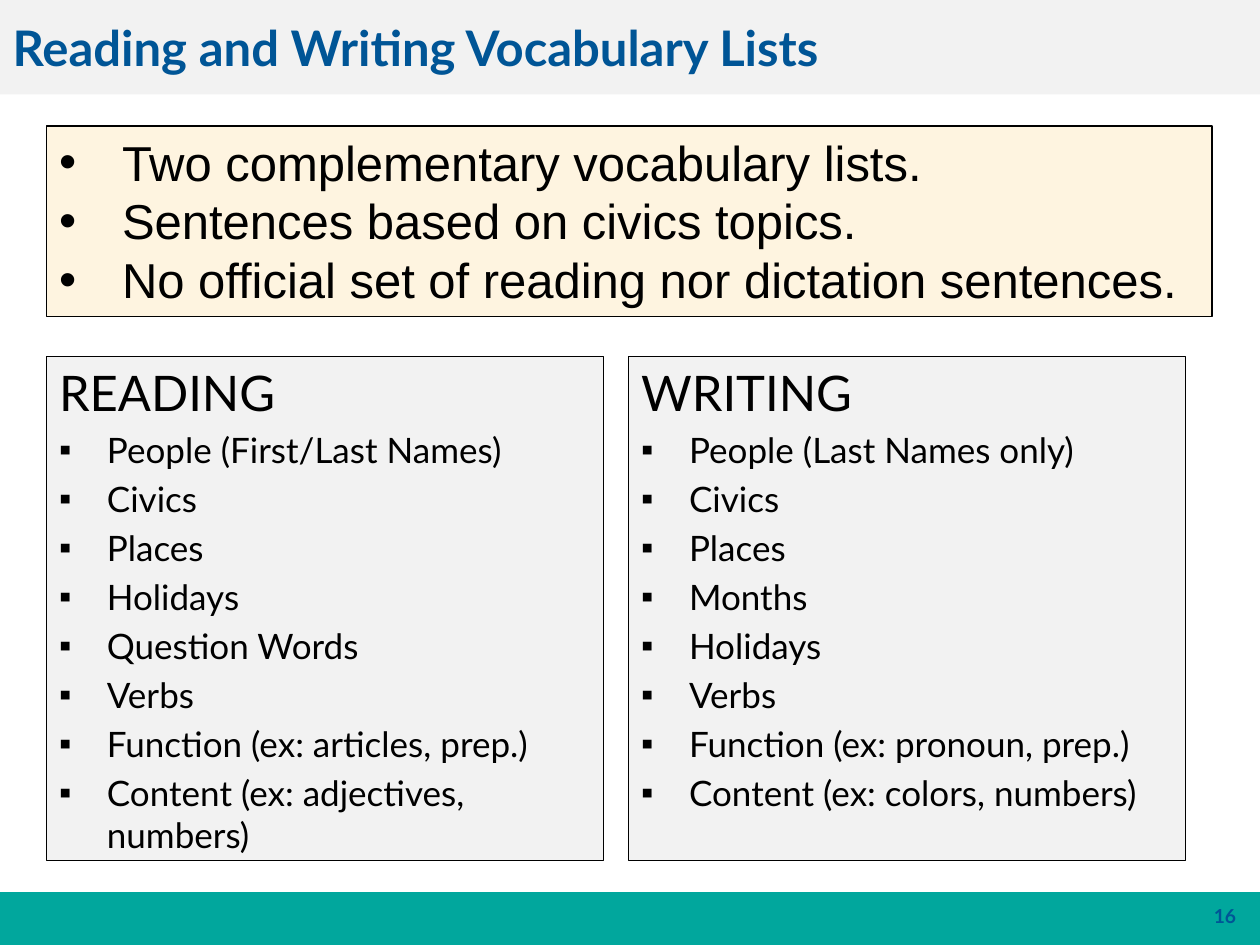
from pptx import Presentation
from pptx.dml.color import RGBColor
from pptx.enum.shapes import MSO_SHAPE
from pptx.enum.text import MSO_ANCHOR, MSO_AUTO_SIZE, PP_ALIGN
from pptx.oxml.ns import qn
from pptx.util import Inches, Pt
from lxml.etree import SubElement

BLACK = RGBColor(0x00, 0x00, 0x00)
BLUE = RGBColor(0x00, 0x55, 0x96)
TEAL = RGBColor(0x01, 0xA7, 0x9D)
GRAY = RGBColor(0xF2, 0xF2, 0xF2)
CREAM = RGBColor(0xFE, 0xF4, 0xE0)

WIDTH, HEIGHT = 10, 7.5
MARGIN = 0.37
COLUMN_WIDTH, COLUMN_GAP = 4.42, 0.2

TITLE_FONT = {"name": "Lato", "size": Pt(28), "bold": True}
NUMBER_FONT = {"name": "Lato", "size": Pt(11), "bold": True}
HEADING_FONT = {"name": "Lato", "size": Pt(28)}
ITEM_FONT = {"name": "Lato", "size": Pt(20)}
SUMMARY_FONT = {"name": "Arial", "size": Pt(28)}

SUMMARY = [
    "Two complementary vocabulary lists.",
    "Sentences based on civics topics.",
    "No official set of reading nor dictation sentences.",
]
LISTS = {
    "READING": ["People (First/Last Names)", "Civics", "Places", "Holidays",
                "Question Words", "Verbs", "Function (ex: articles, prep.)",
                "Content (ex: adjectives, numbers)"],
    "WRITING": ["People (Last Names only)", "Civics", "Places", "Months",
                "Holidays", "Verbs", "Function (ex: pronoun, prep.)",
                "Content (ex: colors, numbers)"],
}


def add_panel(page, box, fill, line=None):
    panel = page.shapes.add_shape(MSO_SHAPE.RECTANGLE, *map(Inches, box))
    panel.shadow.inherit = False
    panel.fill.solid()
    panel.fill.fore_color.rgb = fill
    if line is None:
        panel.line.fill.background()
    else:
        panel.line.color.rgb = line
        panel.line.width = Pt(0.75)
    frame = panel.text_frame
    frame.word_wrap = True
    frame.vertical_anchor = MSO_ANCHOR.TOP
    return panel


def write(para, text, font, color=BLACK, align=PP_ALIGN.LEFT):
    para.alignment = align
    span = para.add_run()
    span.text = text
    for name, value in font.items():
        setattr(span.font, name, value)
    span.font.color.rgb = color


def add_bullet(para, symbol, indent):
    """Give the paragraph a black bullet that hangs by indent inches."""
    props = para._p.get_or_add_pPr()
    props.set("marL", str(Inches(indent)))
    props.set("indent", str(-Inches(indent)))
    color = SubElement(props, qn("a:buClr"))
    SubElement(color, qn("a:srgbClr"), val=str(BLACK))
    SubElement(props, qn("a:buFont"), typeface="Arial")
    SubElement(props, qn("a:buChar"), char=symbol)


def add_header(page, box, text):
    left, top, width, height = box
    band = add_panel(page, box, GRAY)
    title = page.shapes.title
    title._element.addprevious(band._element)
    title.left, title.top = Inches(left), Inches(top)
    title.width, title.height = Inches(width * 0.72), Inches(height)
    frame = title.text_frame
    frame.auto_size = MSO_AUTO_SIZE.NONE
    frame.vertical_anchor = MSO_ANCHOR.MIDDLE
    write(frame.paragraphs[0], text, TITLE_FONT, BLUE)


def add_footer(page, box, number):
    left, top, width, height = box
    add_panel(page, box, TEAL)
    label = page.shapes.add_textbox(Inches(left + width * 0.758), Inches(top + 0.05),
                                    Inches(width * 0.233), Inches(0.27))
    label.text_frame.word_wrap = True
    write(label.text_frame.paragraphs[0], number, NUMBER_FONT, BLUE, PP_ALIGN.RIGHT)


def add_summary(page, box, lines):
    frame = add_panel(page, box, CREAM, BLACK).text_frame
    for index, line in enumerate(lines):
        para = frame.add_paragraph() if index else frame.paragraphs[0]
        para.line_spacing = Pt(33.6)
        add_bullet(para, "•", 0.5)
        write(para, line, SUMMARY_FONT)


def add_word_list(page, box, heading, items):
    frame = add_panel(page, box, GRAY, BLACK).text_frame
    write(frame.paragraphs[0], heading, HEADING_FONT)
    for item in items:
        para = frame.add_paragraph()
        para.space_before = Pt(4)
        add_bullet(para, "▪", 0.38)
        write(para, item, ITEM_FONT)


def main():
    deck = Presentation()
    deck.slide_width, deck.slide_height = Inches(WIDTH), Inches(HEIGHT)
    page = deck.slides.add_slide(deck.slide_layouts[5])
    add_header(page, (0, 0, WIDTH, 0.75), "Reading and Writing Vocabulary Lists")
    add_footer(page, (0, 7.08, WIDTH, HEIGHT - 7.08), "16")
    add_summary(page, (MARGIN, 1, 9.25, 1.51), SUMMARY)
    for column, (heading, items) in enumerate(LISTS.items()):
        left = MARGIN + column * (COLUMN_WIDTH + COLUMN_GAP)
        add_word_list(page, (left, 2.83, COLUMN_WIDTH, 4), heading, items)
    deck.save("out.pptx")


if __name__ == "__main__":
    main()
